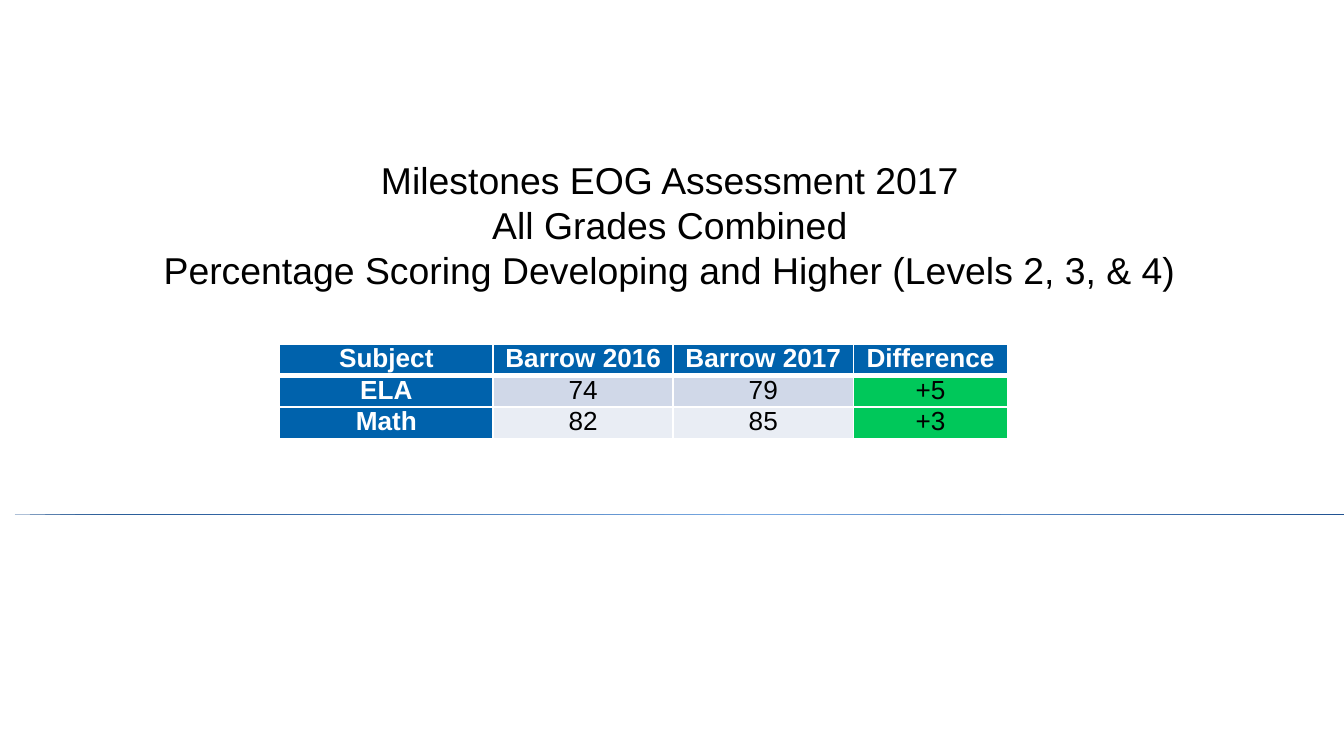
import pptx
import pptx.dml.color
import pptx.enum.shapes
import pptx.enum.text
import pptx.oxml
import pptx.oxml.ns
import pptx.util
from pptx.util import Inches

RGBColor = pptx.dml.color.RGBColor
WHITE = RGBColor(0xFF, 0xFF, 0xFF)
BLACK = RGBColor(0x00, 0x00, 0x00)
HEADER_BLUE = RGBColor(0x00, 0x62, 0xAC)
GAIN_GREEN = RGBColor(0x00, 0xC8, 0x5A)
BAND_FILLS = [RGBColor(0xD0, 0xD8, 0xE8), RGBColor(0xE9, 0xED, 0xF4)]
RULE_DARK = RGBColor(0x19, 0x4D, 0x8C)
RULE_LIGHT = RGBColor(0x7B, 0xAB, 0xE5)

HEADING = [
    "Milestones EOG Assessment 2017",
    "All Grades Combined",
    "Percentage Scoring Developing and Higher (Levels 2, 3, & 4)",
]
SCORES = [
    ["Subject", "Barrow 2016", "Barrow 2017", "Difference"],
    ["ELA", "74", "79", "+5"],
    ["Math", "82", "85", "+3"],
]
COLUMN_WIDTHS = [1.59, 1.34, 1.34, 1.15]
TABLE_HEIGHT = 0.7


def add_centred_run(paragraph, text, size, color, bold=False):
    paragraph.alignment = pptx.enum.text.PP_ALIGN.CENTER
    run = paragraph.add_run()
    run.text = text
    run.font.name = "Arial"
    run.font.size = pptx.util.Pt(size)
    run.font.color.rgb = color
    run.font.bold = bold


def add_rule(slide):
    """Flat triangle that shows as a hairline with a blue gradient."""
    rule = slide.shapes.add_shape(
        pptx.enum.shapes.MSO_SHAPE.RIGHT_TRIANGLE,
        Inches(0), Inches(3.83), Inches(10.01), Inches(0))
    rule.shadow.inherit = False
    rule.line.fill.background()
    rule.fill.gradient()
    rule.fill.gradient_angle = 310
    stop_list = rule.fill.gradient_stops[0]._gs.getparent()
    for stop in list(stop_list):
        stop_list.remove(stop)
    for percent, color in [(0, RULE_DARK), (55, RULE_LIGHT), (100, RULE_DARK)]:
        stop_list.append(pptx.oxml.parse_xml(
            f'<a:gs {pptx.oxml.ns.nsdecls("a")} pos="{percent * 1000}">'
            f'<a:srgbClr val="{color}"/></a:gs>'))


def add_heading(slide):
    heading = slide.shapes.add_textbox(
        Inches(0.75), Inches(1.12), Inches(8.47), Inches(1.11))
    frame = heading.text_frame
    frame.word_wrap = True
    for index, line in enumerate(HEADING):
        paragraph = frame.add_paragraph() if index else frame.paragraphs[0]
        add_centred_run(paragraph, line, 20, BLACK)


def set_borders(cell, top_width, bottom_width):
    widths = {"lnL": 1, "lnR": 1, "lnT": top_width, "lnB": bottom_width}
    properties = cell._tc.get_or_add_tcPr()
    for position, (side, width) in enumerate(widths.items()):
        properties.insert(position, pptx.oxml.parse_xml(
            f'<a:{side} {pptx.oxml.ns.nsdecls("a")} w="{pptx.util.Pt(width)}">'
            f'<a:solidFill><a:srgbClr val="{WHITE}"/></a:solidFill></a:{side}>'))


def cell_fill(row, column):
    if row == 0 or column == 0:
        return HEADER_BLUE
    if column == len(COLUMN_WIDTHS) - 1:
        return GAIN_GREEN
    return BAND_FILLS[(row - 1) % 2]


def add_score_table(slide):
    table = slide.shapes.add_table(
        len(SCORES), len(COLUMN_WIDTHS), Inches(2.08), Inches(2.56),
        Inches(sum(COLUMN_WIDTHS)), Inches(TABLE_HEIGHT)).table
    for column, width in zip(table.columns, COLUMN_WIDTHS):
        column.width = Inches(width)
    for row, values in enumerate(SCORES):
        for column, value in enumerate(values):
            cell = table.cell(row, column)
            cell.margin_left = cell.margin_right = Inches(0.07)
            cell.margin_top = cell.margin_bottom = 0
            cell.fill.solid()
            cell.fill.fore_color.rgb = cell_fill(row, column)
            set_borders(cell, 3 if row == 1 else 1, 3 if row == 0 else 1)
            is_header = row == 0 or column == 0
            add_centred_run(cell.text_frame.paragraphs[0], value, 14,
                            WHITE if is_header else BLACK, is_header)


def main():
    presentation = pptx.Presentation()
    presentation.slide_width = Inches(10)
    presentation.slide_height = Inches(10 * 9 / 16)
    slide = presentation.slides.add_slide(presentation.slide_layouts[6])
    add_rule(slide)
    add_heading(slide)
    add_score_table(slide)
    presentation.save("out.pptx")


if __name__ == "__main__":
    main()
